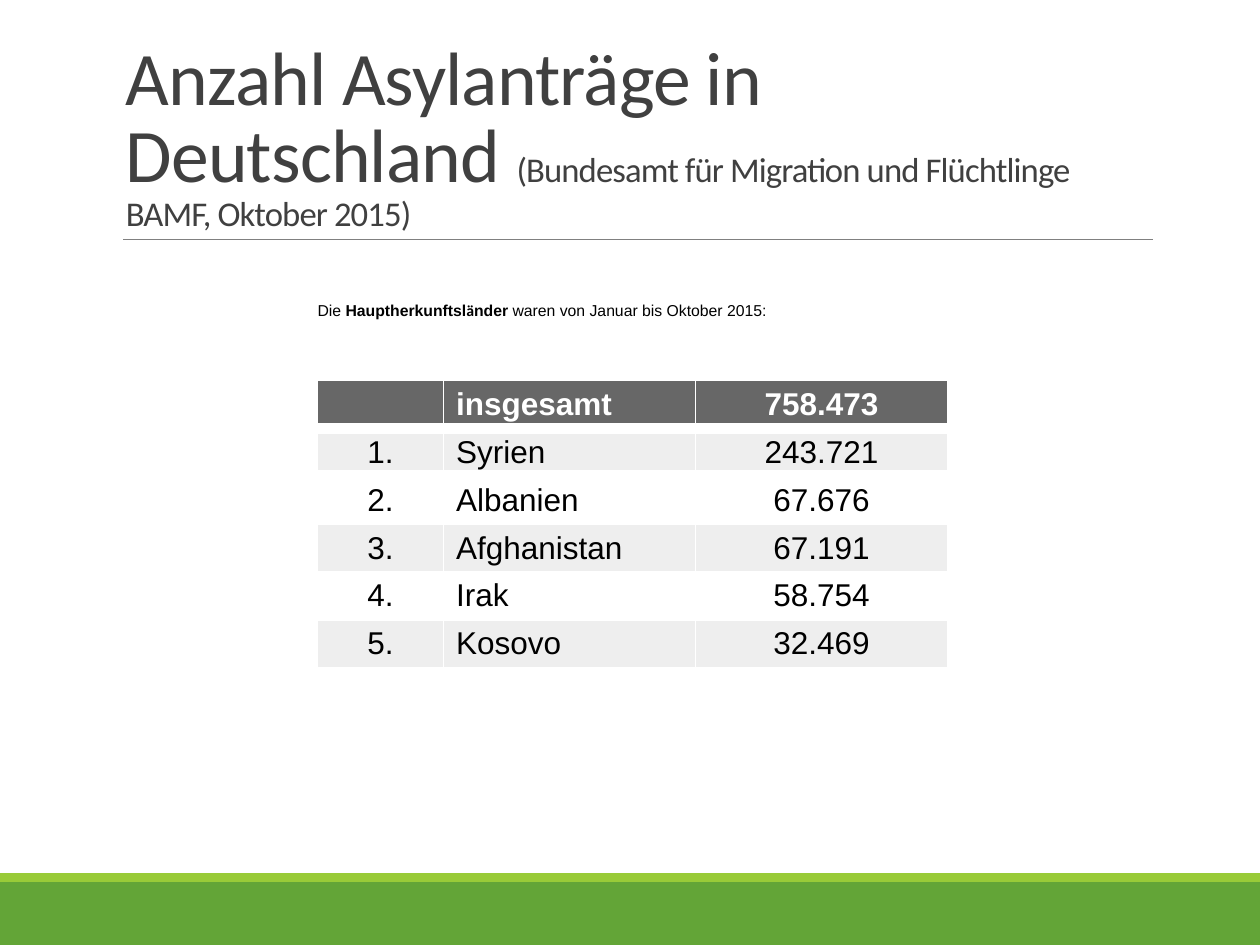
import pptx
import pptx.dml.color
import pptx.enum.shapes
import pptx.enum.text
import pptx.oxml
import pptx.oxml.ns
import pptx.util
from pptx.dml.color import RGBColor
from pptx.enum.text import MSO_ANCHOR, PP_ALIGN
from pptx.util import Inches

DARK_GREEN = RGBColor(0x63, 0xA5, 0x37)
LIGHT_GREEN = RGBColor(0x99, 0xCB, 0x38)
RULE_GRAY = RGBColor(0x80, 0x80, 0x80)
TITLE_GRAY = RGBColor(0x40, 0x40, 0x40)
HEADER_GRAY = RGBColor(0x67, 0x67, 0x67)
BAND_GRAY = RGBColor(0xEE, 0xEE, 0xEE)
WHITE = RGBColor(0xFF, 0xFF, 0xFF)
BLACK = RGBColor(0, 0, 0)


def add_text(para, text, size, color, font="Arial", bold=False, spacing=None):
    """Append a run to para; spacing is in hundredths of a point."""
    span = para.add_run()
    span.text = text
    span.font.size = pptx.util.Pt(size)
    span.font.name = font
    span.font.bold = bold
    span.font.color.rgb = color
    if spacing is not None:
        span.font._element.set("spc", str(spacing))


def add_white_border(cell, side):
    """Draw a thick white line on one side of a cell: lnT or lnB."""
    border = pptx.oxml.parse_xml(
        f'<a:{side} {pptx.oxml.ns.nsdecls("a")} w="{pptx.util.Pt(7.5)}">'
        f'<a:solidFill><a:srgbClr val="{WHITE}"/></a:solidFill></a:{side}>'
    )
    cell._tc.get_or_add_tcPr().insert(0, border)


deck = pptx.Presentation()
deck.slide_width = Inches(10)
deck.slide_height = Inches(7.5)
page = deck.slides.add_slide(deck.slide_layouts[6])

# Footer bands and the rule under the title
for top, height, color in [(7, 0.5, DARK_GREEN), (6.93, 0.07, LIGHT_GREEN)]:
    band = page.shapes.add_shape(
        pptx.enum.shapes.MSO_SHAPE.RECTANGLE, 0, Inches(top), deck.slide_width, Inches(height)
    )
    band.shadow.inherit = False
    band.fill.solid()
    band.fill.fore_color.rgb = color
    band.line.fill.background()

rule = page.shapes.add_connector(
    pptx.enum.shapes.MSO_CONNECTOR.STRAIGHT, Inches(0.98), Inches(1.9), Inches(9.15), Inches(1.9)
)
rule.line.color.rgb = RULE_GRAY
rule.line.width = pptx.util.Pt(0.5)
rule._element.spPr.append(pptx.oxml.parse_xml(f'<a:effectLst {pptx.oxml.ns.nsdecls("a")}/>'))

# Title
title = page.shapes.add_textbox(Inches(0.9), Inches(0.31), Inches(8.25), Inches(1.59)).text_frame
title.word_wrap = True
title.vertical_anchor = MSO_ANCHOR.BOTTOM
para = title.paragraphs[0]
para.line_spacing = 0.85
for text, size in [
    ("Anzahl Asylanträge in Deutschland ", 43.2),
    ("(Bundesamt für Migration und Flüchtlinge BAMF, Oktober 2015)", 19.8),
]:
    add_text(para, text, size, TITLE_GRAY, font="Calibri", spacing=-50)

# Table of countries
rows = [
    ("", "insgesamt", "758.473"),
    ("1.", "Syrien", "243.721"),
    ("2.", "Albanien", "67.676"),
    ("3.", "Afghanistan", "67.191"),
    ("4.", "Irak", "58.754"),
    ("5.", "Kosovo", "32.469"),
]
row_height = Inches(0.38)
table = page.shapes.add_table(
    len(rows), 3, Inches(2.52), Inches(3.02), Inches(5), row_height * len(rows)
).table
for column, width in zip(table.columns, (1, 2, 2)):
    column.width = Inches(width)

for row_index, values in enumerate(rows):
    table.rows[row_index].height = row_height
    is_header = row_index == 0
    fill = HEADER_GRAY if is_header else BAND_GRAY if row_index % 2 else WHITE
    for column_index, value in enumerate(values):
        cell = table.cell(row_index, column_index)
        cell.fill.solid()
        cell.fill.fore_color.rgb = fill
        cell.margin_top = cell.margin_bottom = Inches(0.04)
        cell.vertical_anchor = MSO_ANCHOR.MIDDLE
        if row_index < 2:
            add_white_border(cell, "lnB" if is_header else "lnT")
        para = cell.text_frame.paragraphs[0]
        para.alignment = PP_ALIGN.LEFT if column_index == 1 else PP_ALIGN.CENTER
        if value:
            add_text(para, value, 18, WHITE if is_header else BLACK, bold=is_header)

# Line introducing the table
intro = page.shapes.add_textbox(Inches(2.52), Inches(2.21), Inches(7.48), Inches(0.5)).text_frame
intro.word_wrap = True
intro.vertical_anchor = MSO_ANCHOR.MIDDLE
intro.margin_left = intro.margin_right = intro.margin_top = intro.margin_bottom = 0
para = intro.paragraphs[0]
for text, font, bold in [
    ("Die ", "Arial", False),
    ("Hauptherkunftsl", "Arial", True),
    ("ä", "Calibri", True),
    ("nder ", "Arial", True),
    ("waren von Januar bis Oktober 2015:", "Arial", False),
]:
    add_text(para, text, 9, BLACK, font=font, bold=bold)

deck.save("out.pptx")
